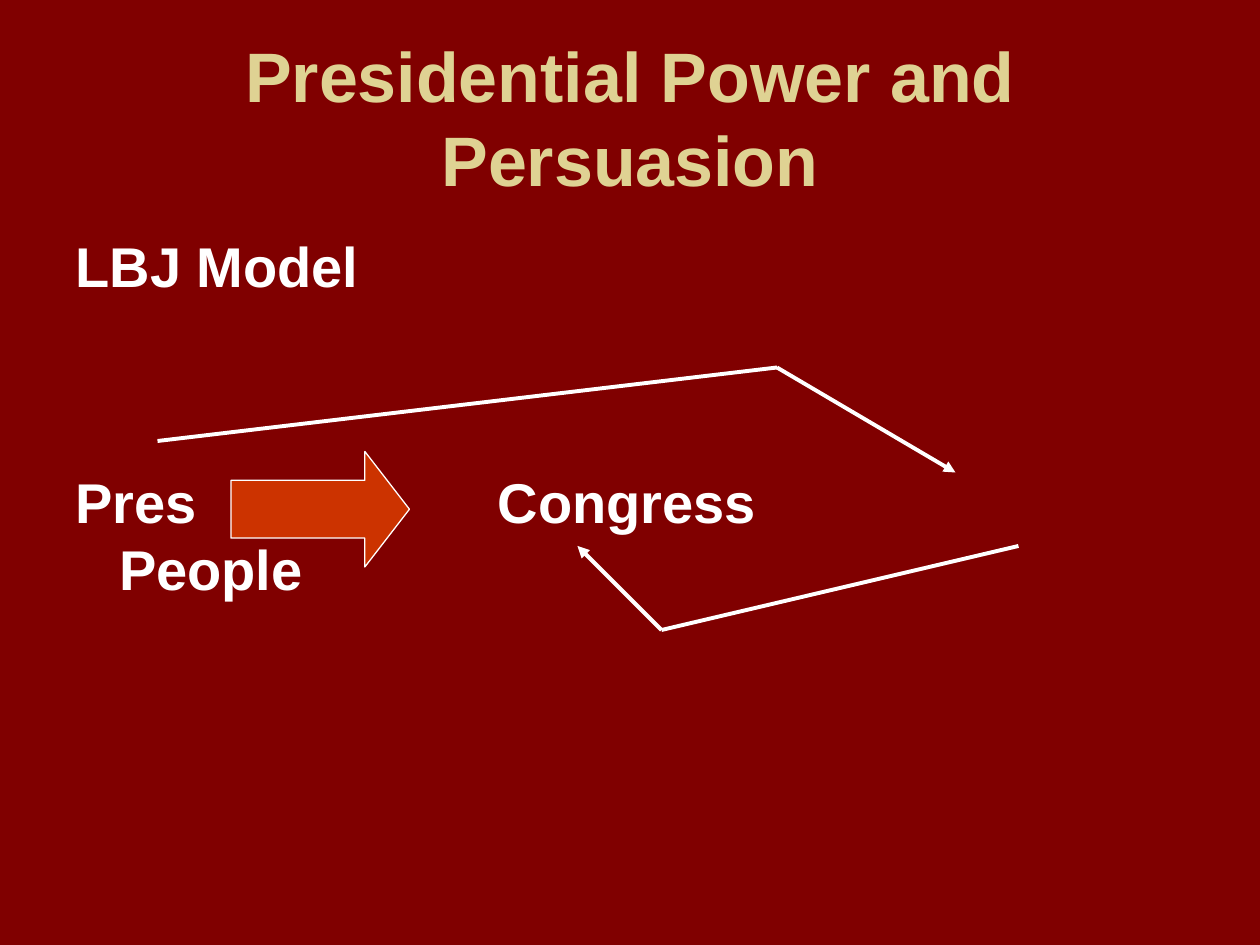
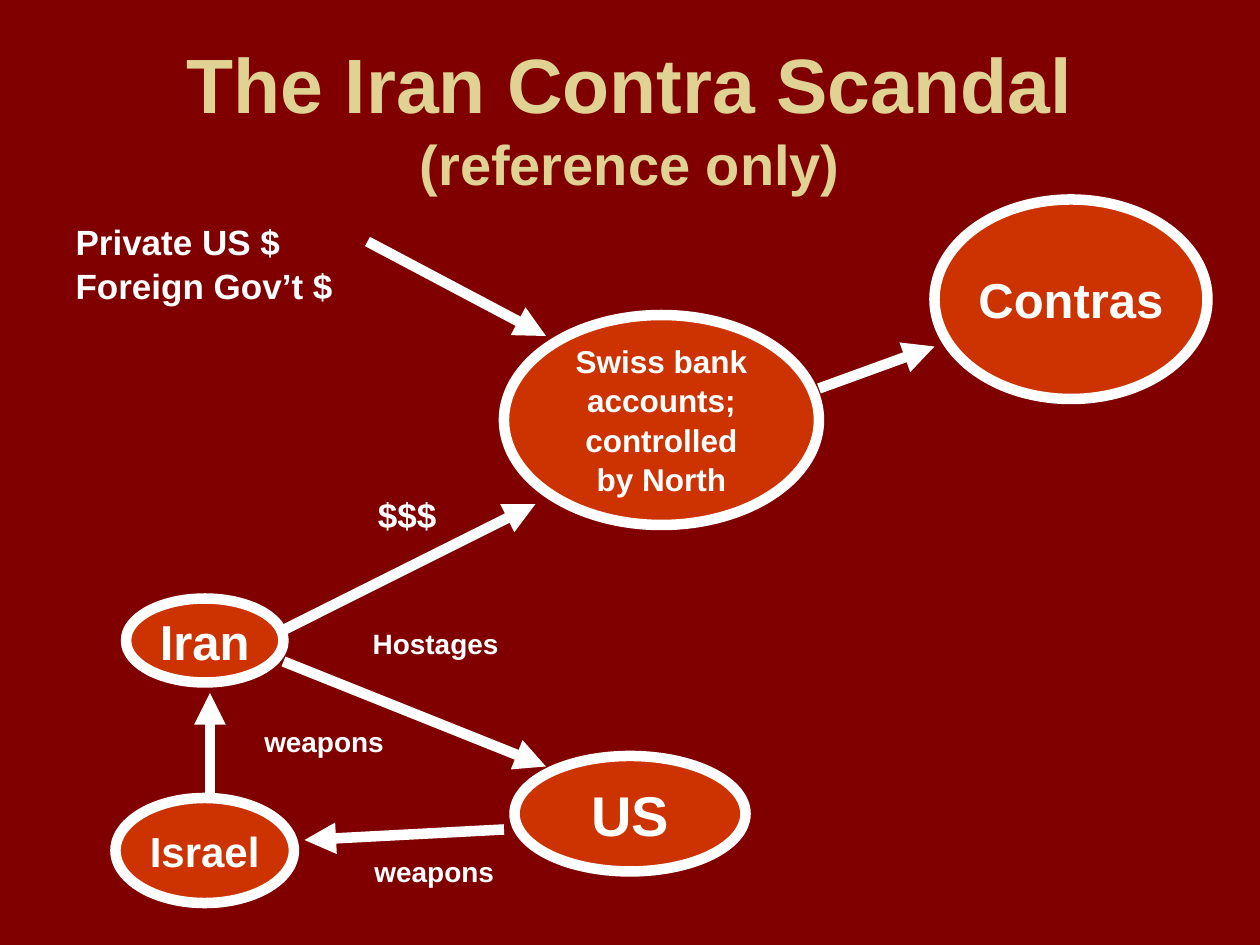
"""Build two slides on presidential power and the Iran Contra scandal."""
import pptx
import pptx.dml.color
import pptx.enum.shapes
import pptx.enum.text
import pptx.oxml
import pptx.oxml.ns
import pptx.util
from pptx.util import Pt

MAROON = pptx.dml.color.RGBColor(0x80, 0x00, 0x00)
SAND = pptx.dml.color.RGBColor(0xDF, 0xD2, 0x93)
ORANGE = pptx.dml.color.RGBColor(0xCC, 0x33, 0x00)
WHITE = pptx.dml.color.RGBColor(0xFF, 0xFF, 0xFF)
SHAPES = pptx.enum.shapes.MSO_SHAPE
CENTER = pptx.enum.text.PP_ALIGN.CENTER
MIDDLE = pptx.enum.text.MSO_ANCHOR.MIDDLE


def write_text(frame, text, size, color=WHITE, align=None):
    """Fill a text frame with bold Arial, one paragraph per line."""
    frame.text = text
    for paragraph in frame.paragraphs:
        paragraph.alignment = align
        paragraph.font.name = "Arial"
        paragraph.font.size = Pt(size)
        paragraph.font.bold = True
        paragraph.font.color.rgb = color
    for paragraph in frame.paragraphs[1:]:
        paragraph.space_before = Pt(1)


def draw_path(page, points, weight):
    """Join points with straight lines and put an arrowhead at the end."""
    for start, end in zip(points, points[1:]):
        line = page.shapes.add_connector(
            pptx.enum.shapes.MSO_CONNECTOR.STRAIGHT,
            *(Pt(length) for length in start + end))
        line.line.color.rgb = WHITE
        line.line.width = Pt(weight)
        properties = line._element.spPr
        properties.append(pptx.oxml.parse_xml(
            f"<a:effectLst {pptx.oxml.ns.nsdecls('a')}/>"))
    line.line._get_or_add_ln().append(pptx.oxml.parse_xml(
        f"<a:tailEnd {pptx.oxml.ns.nsdecls('a')} type='triangle'/>"))


deck = pptx.Presentation()
deck.slide_width = Pt(720)
deck.slide_height = Pt(540)

titles = [("Presidential Power and Persuasion", 40),
          ("The Iran Contra Scandal\v(reference only)", 44)]
pages = []
for text, size in titles:
    page = deck.slides.add_slide(deck.slide_layouts[6])
    page.background.fill.solid()
    page.background.fill.fore_color.rgb = MAROON
    title = page.shapes.add_textbox(Pt(36), Pt(21.6), Pt(648), Pt(90))
    title.text_frame.word_wrap = True
    title.text_frame.vertical_anchor = MIDDLE
    write_text(title.text_frame, text, size, SAND, CENTER)
    pages.append(page)
power_page, scandal_page = pages
title.text_frame.paragraphs[0].runs[1].font.size = Pt(32)

labels = [
    (power_page, "LBJ Model", 32, 43.2, 132, 200),
    (power_page, "Pres", 32, 43.2, 267, 80),
    (power_page, "Congress", 32, 284.5, 267, 160),
    (power_page, "People", 32, 68, 305.5, 120),
    (scandal_page, "Private US $\nForeign Gov’t $", 20, 43.2, 126, 160),
    (scandal_page, "$$$", 20, 216, 282, 50),
    (scandal_page, "Hostages", 16, 213, 358, 90),
    (scandal_page, "weapons", 16, 151, 414, 90),
    (scandal_page, "weapons", 16, 214, 488, 90),
]
for page, text, size, left, top, width in labels:
    height = 1.2 * size * (text.count("\n") + 1)
    box = page.shapes.add_textbox(Pt(left), Pt(top), Pt(width), Pt(height))
    frame = box.text_frame
    frame.margin_left = frame.margin_right = 0
    frame.margin_top = frame.margin_bottom = 0
    frame.word_wrap = True
    write_text(frame, text, size)

power_arrow = power_page.shapes.add_shape(
    SHAPES.RIGHT_ARROW, Pt(132), Pt(258), Pt(102), Pt(66))
power_arrow.adjustments[1] = 0.386
power_arrow.shadow.inherit = False
power_arrow.fill.solid()
power_arrow.fill.fore_color.rgb = ORANGE
power_arrow.line.color.rgb = WHITE
power_arrow.line.width = Pt(0.75)

people_to_congress = [(582, 312), (378, 360), (330, 312)]
president_to_people = [(90, 252), (444, 210), (546, 270)]
for points in (people_to_congress, president_to_people):
    draw_path(power_page, points, 2.25)

parties = [
    ("Swiss bank\naccounts;\ncontrolled\nby North", 18, 288, 180, 180, 120),
    ("Contras", 28, 534, 114, 156, 114),
    ("Israel", 24, 66, 456, 102, 60),
    ("Iran", 28, 72, 342, 90, 48),
    ("US", 32, 294, 432, 132, 66),
]
for text, size, *bounds in parties:
    party = scandal_page.shapes.add_shape(
        SHAPES.OVAL, *(Pt(length) for length in bounds))
    party.shadow.inherit = False
    party.fill.solid()
    party.fill.fore_color.rgb = ORANGE
    party.line.color.rgb = WHITE
    party.line.width = Pt(6)
    party.text_frame.word_wrap = False
    party.text_frame.vertical_anchor = MIDDLE
    write_text(party.text_frame, text, size, align=CENTER)

flows = {
    "Iran to bank": [(162, 360), (306, 288)],
    "bank to Contras": [(468, 222), (534, 198)],
    "US to Israel": [(288, 474), (174, 480)],
    "Israel to Iran": [(120, 456), (120, 396)],
    "Iran to US": [(162, 378), (312, 438)],
    "donors to bank": [(210, 138), (312, 192)],
}
for points in flows.values():
    draw_path(scandal_page, points, 6)

deck.save("out.pptx")
